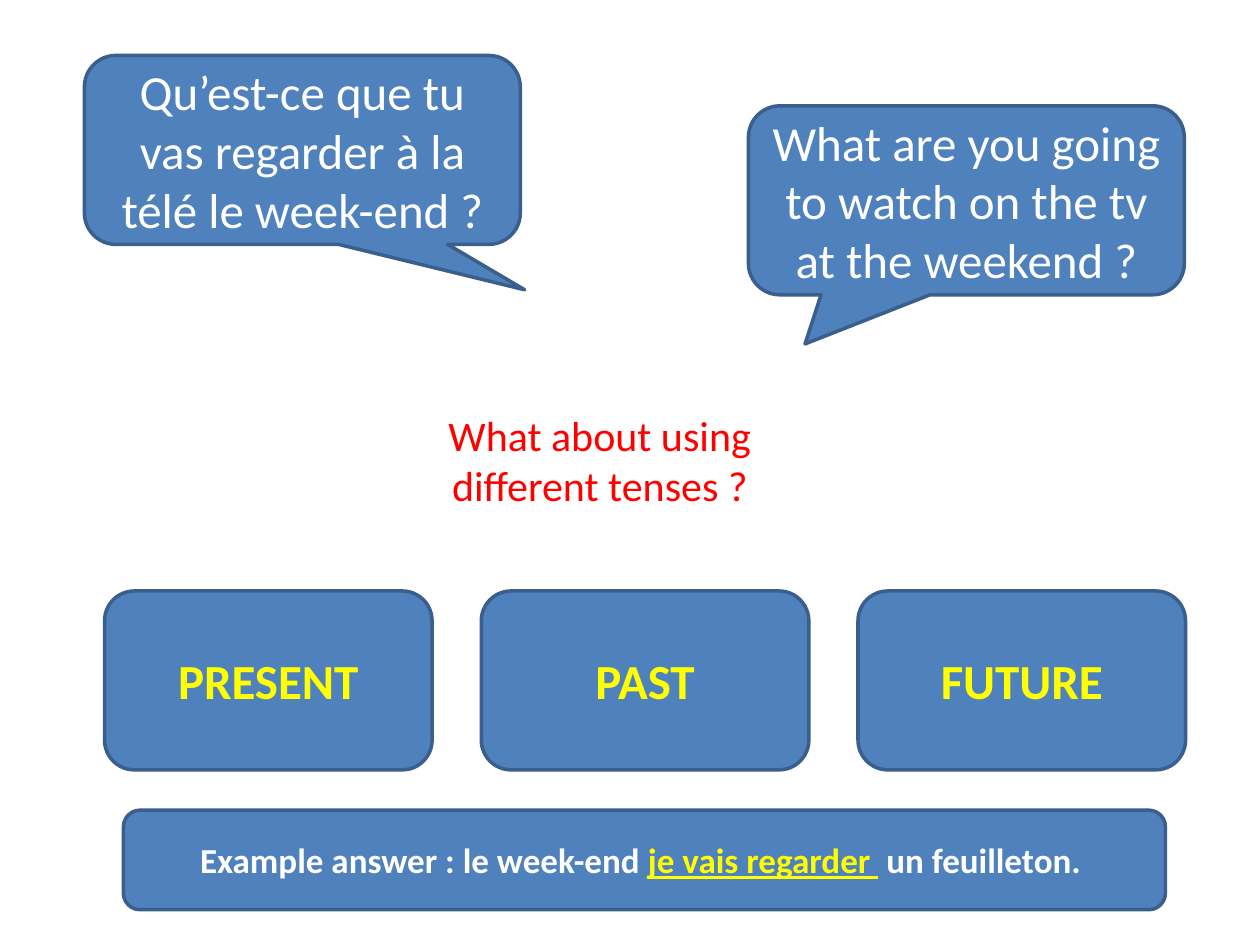
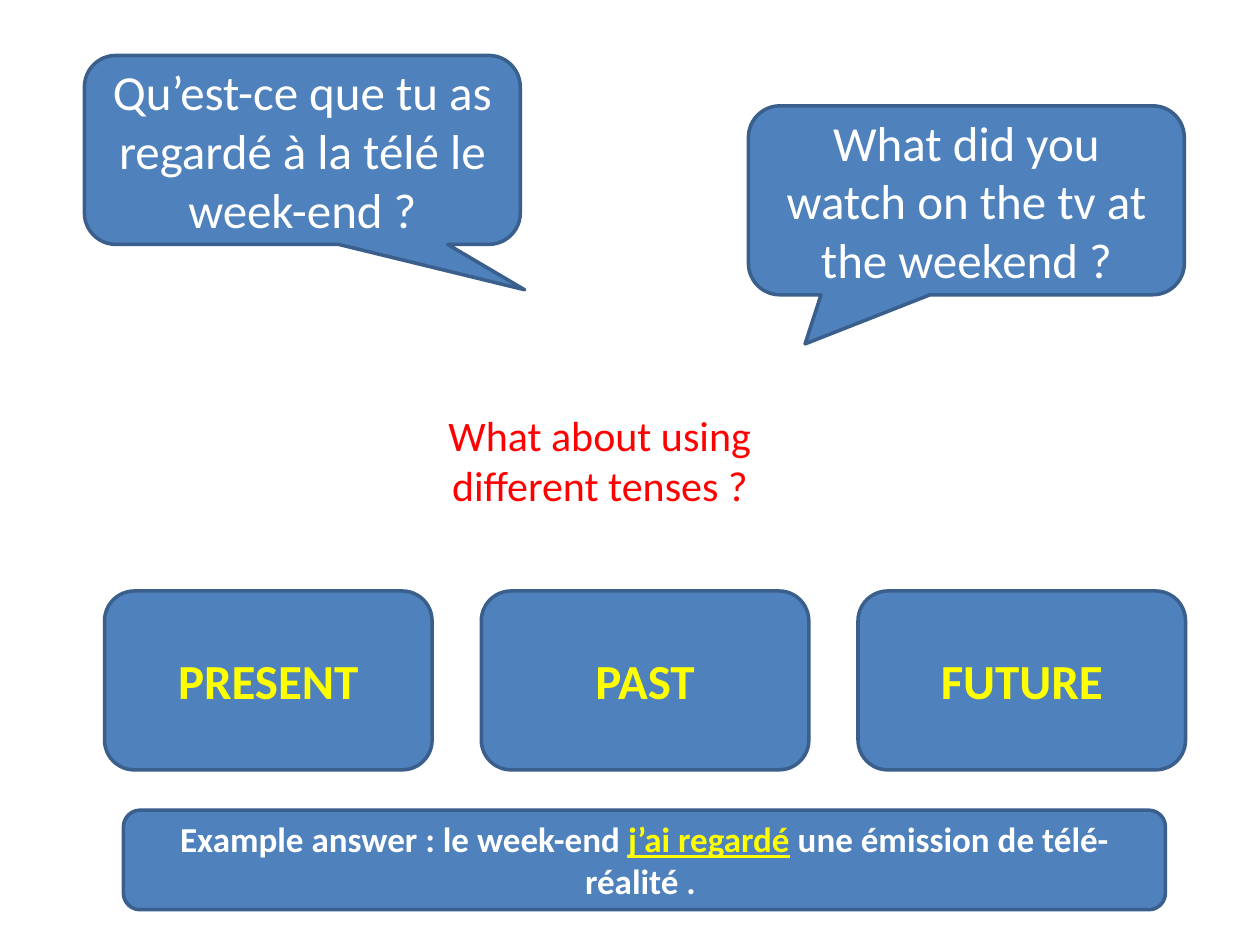
from pptx import Presentation
from pptx.dml.color import RGBColor
from pptx.enum.shapes import MSO_SHAPE
from pptx.enum.text import MSO_ANCHOR, PP_ALIGN
from pptx.util import Pt

BLUE = RGBColor(0x4F, 0x81, 0xBD)
EDGE = RGBColor(0x3A, 0x5F, 0x8C)
WHITE = RGBColor(0xFF, 0xFF, 0xFF)
YELLOW = RGBColor(0xFF, 0xFF, 0x00)
RED = RGBColor(0xFF, 0x00, 0x00)
BUBBLE = MSO_SHAPE.ROUNDED_RECTANGULAR_CALLOUT
ROUND = MSO_SHAPE.ROUNDED_RECTANGLE
CENTER = PP_ALIGN.CENTER
MIDDLE = MSO_ANCHOR.MIDDLE

SPEECH = {"size": Pt(28)}
PROMPT = {"size": Pt(24)}
TENSE = {"size": Pt(28), "bold": True}
ANSWER = {"size": Pt(20), "bold": True}
VERB = {**ANSWER, "underline": True}

# Left, top and tail position of the two speech bubbles
BUBBLES = [(48.24, 31.68, 0.51, 0.74), (427.68, 60.48, -0.37, 0.76)]
TENSES = ["PRESENT", "PAST", "FUTURE"]

# Question in French and English, then the verb and end of the answer
SLIDES = [
    (["Qu’est-ce que tu vas regarder à la télé le week-end ?",
      "What are you going to watch on the tv at the weekend ?"],
     "je vais regarder ", "un feuilleton. "),
    (["Qu’est-ce que tu as regardé à la télé le week-end ?",
      "What did you watch on the tv at the weekend ?"],
     "j’ai regardé", "une émission de télé-réalité . "),
]


def write(shape, *runs):
    """Fill one centred paragraph with (text, colour, format) runs."""
    frame = shape.text_frame
    frame.word_wrap = True
    para = frame.paragraphs[0]
    para.alignment = CENTER
    for text, color, style in runs:
        run = para.add_run()
        run.text = text
        run.font.name = "Calibri"
        run.font.color.rgb = color
        for key, value in style.items():
            setattr(run.font, key, value)


def add_box(slide, kind, *place):
    box = slide.shapes.add_shape(kind, *map(Pt, place))
    box.shadow.inherit = False
    box.fill.solid()
    box.fill.fore_color.rgb = BLUE
    box.line.color.rgb = EDGE
    box.line.width = Pt(2)
    box.text_frame.vertical_anchor = MIDDLE
    return box


deck = Presentation()
deck.slide_width, deck.slide_height = Pt(720), Pt(540)
blank = deck.slide_layouts[6]

for speech, verb, ending in SLIDES:
    slide = deck.slides.add_slide(blank)

    for text, (left, top, tail_x, tail_y) in zip(speech, BUBBLES):
        bubble = add_box(slide, BUBBLE, left, top, 249.12, 108)
        bubble.adjustments[0] = tail_x
        bubble.adjustments[1] = tail_y
        write(bubble, (text, WHITE, SPEECH))

    prompt = slide.shapes.add_textbox(Pt(206.64), Pt(230.4), Pt(272.16), Pt(65.52))
    write(prompt, ("What about using different tenses ?", RED, PROMPT))

    for i, tense in enumerate(TENSES):
        box = add_box(slide, ROUND, 59.76 + i * 215.28, 337.68, 187.2, 102.24)
        write(box, (tense, YELLOW, TENSE))

    answer = add_box(slide, ROUND, 70.56, 462.96, 595.44, 56.88)
    write(answer,
          ("Example answer : le week-end ", WHITE, ANSWER),
          (verb, YELLOW, VERB),
          (" " + ending, WHITE, ANSWER))

deck.save("out.pptx")
